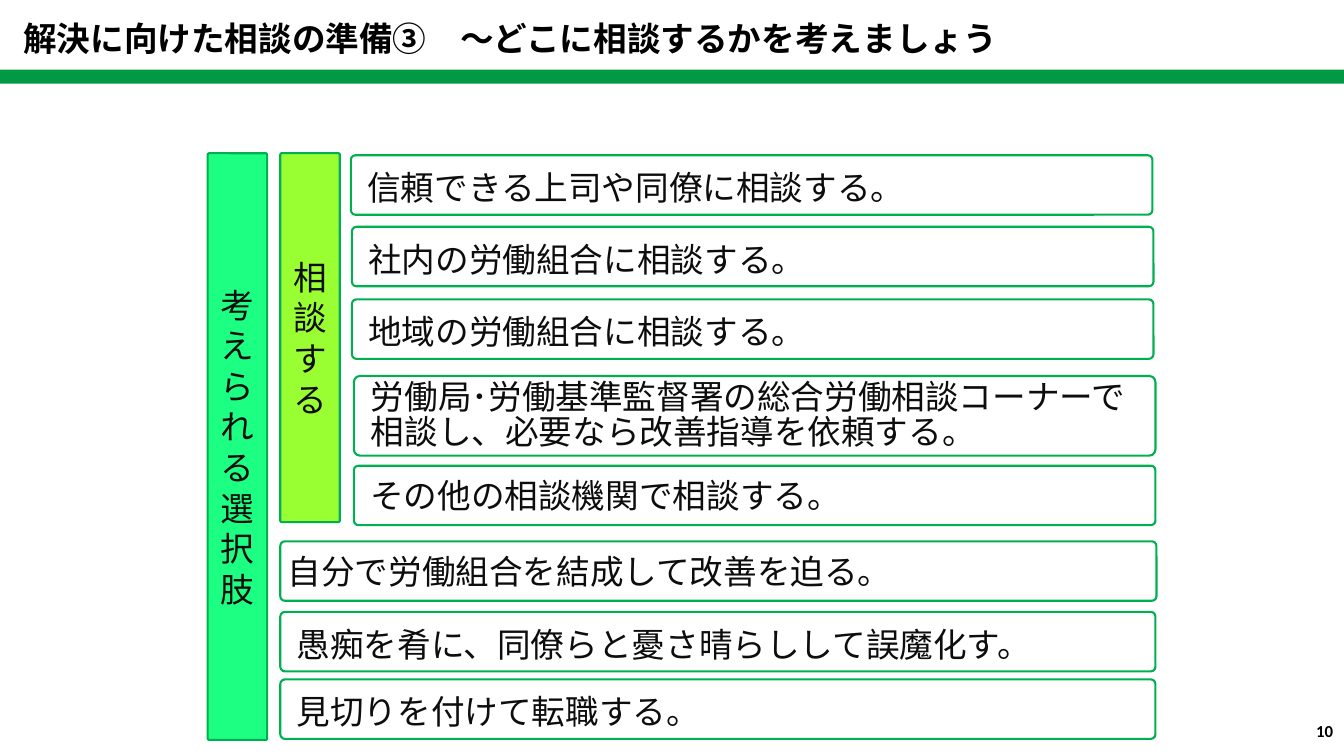
from dataclasses import dataclass

from lxml.etree import SubElement
from pptx import Presentation
from pptx.dml.color import RGBColor
from pptx.enum.shapes import MSO_SHAPE
from pptx.enum.text import MSO_ANCHOR, MSO_AUTO_SIZE, PP_ALIGN
from pptx.oxml.ns import qn
from pptx.util import Emu, Pt

EMU_PER_PX = 9144


@dataclass(frozen=True)
class Theme:
    white: str = "FFFFFF"
    border: str = "00B050"
    rule: str = "009944"
    options: str = "1DFF83"
    consult: str = "99FF33"
    ink: str = "0D0D0D"
    black: str = "000000"
    japanese_font: str = "Noto Sans CJK JP"
    number_font: str = "Calibri"
    text_size: int = 24
    number_size: int = 12
    border_width: float = 1.5
    opacity: int = 70


THEME = Theme()


@dataclass(frozen=True)
class Box:
    text: str
    left: int
    top: int
    width: int
    height: int = 59
    fill: str | None = THEME.white
    opacity: int = THEME.opacity
    corner: float = 0.077
    inset: int = 15
    spacing: int | None = 32
    align: PP_ALIGN = PP_ALIGN.LEFT


def heading_column(text: str, left: int, height: int, fill: str) -> Box:
    return Box(text, left, 152, 59, height, fill, opacity=100, corner=0.026,
               inset=6, spacing=29, align=PP_ALIGN.CENTER)


BOXES = (
    heading_column("考えられる選択肢", 206, 582, THEME.options),
    heading_column("相談する", 278, 366, THEME.consult),
    Box("自分で労働組合を結成して改善を迫る。", 278, 537, 869, inset=6, spacing=None),
    Box("愚痴を肴に、同僚らと憂さ晴らしして誤魔化す。", 278, 607, 868),
    Box("見切りを付けて転職する。", 278, 674, 868),
    Box("信頼できる上司や同僚に相談する。", 348, 154, 795),
    Box("社内の労働組合に相談する。", 349, 225, 795),
    Box("地域の労働組合に相談する。", 349, 297, 795),
    Box("労働局･労働基準監督署の総合労働相談コーナーで相談し、必要なら改善指導を依頼する。",
        351, 373, 795, 79, fill=None, spacing=25),
    Box("その他の相談機関で相談する。", 351, 462, 795, spacing=None),
)


def px(length: int) -> Emu:
    return Emu(length * EMU_PER_PX)


def set_attributes(target, values: dict) -> None:
    for name, value in values.items():
        setattr(target, name, value)


def place(shape, left: int, top: int, width: int, height: int) -> None:
    set_attributes(shape, {"left": px(left), "top": px(top),
                           "width": px(width), "height": px(height)})


def write(shape, text: str, font: str, size: int, color: str, bold: bool = False,
          align: PP_ALIGN = PP_ALIGN.LEFT, spacing: int | None = None) -> None:
    frame = shape.text_frame
    set_attributes(frame, {"word_wrap": True, "auto_size": MSO_AUTO_SIZE.NONE,
                           "vertical_anchor": MSO_ANCHOR.MIDDLE})
    para = frame.paragraphs[0]
    set_attributes(para, {"alignment": align,
                          "line_spacing": Pt(spacing) if spacing else None})
    span = para.add_run()
    span.text = text
    set_attributes(span.font, {"name": font, "size": Pt(size), "bold": bold})
    span.font.color.rgb = RGBColor.from_string(color)
    latin = span.font._element.find(qn("a:latin"))
    east_asian = SubElement(span.font._element, qn("a:ea"), typeface=font)
    latin.addnext(east_asian)


def paint(shape, color: str | None, opacity: int = 100) -> None:
    shape.shadow.inherit = False
    if color is None:
        shape.fill.background()
        return
    shape.fill.solid()
    shape.fill.fore_color.rgb = RGBColor.from_string(color)
    if opacity < 100:
        color_node = shape._element.spPr.find(qn("a:solidFill"))[0]
        SubElement(color_node, qn("a:alpha"), val=str(opacity * 1000))


def draw_box(page, box: Box) -> None:
    shape = page.shapes.add_shape(
        MSO_SHAPE.ROUNDED_RECTANGLE,
        *map(px, (box.left, box.top, box.width, box.height)))
    shape.adjustments[0] = box.corner
    paint(shape, box.fill, box.opacity)
    shape.line.color.rgb = RGBColor.from_string(THEME.border)
    shape.line.width = Pt(THEME.border_width)
    set_attributes(shape.text_frame, {
        "margin_left": px(box.inset), "margin_right": px(6),
        "margin_top": px(3), "margin_bottom": px(3)})
    write(shape, box.text, THEME.japanese_font, THEME.text_size, THEME.ink,
          align=box.align, spacing=box.spacing)


def main() -> None:
    deck = Presentation()
    set_attributes(deck, {"slide_width": px(1333), "slide_height": px(750)})
    page = deck.slides.add_slide(deck.slide_layouts[5])

    for box in BOXES:
        draw_box(page, box)

    rule = page.shapes.add_shape(MSO_SHAPE.RECTANGLE, *map(px, (0, 69, 1333, 14)))
    paint(rule, THEME.rule)
    rule.line.fill.background()

    title = page.shapes.title
    place(title, 13, 13, 1055, 50)
    write(title, "解決に向けた相談の準備③　～どこに相談するかを考えましょう",
          THEME.japanese_font, THEME.text_size, THEME.black, bold=True)

    number = page.shapes.add_textbox(*map(px, (1021, 705, 311, 40)))
    write(number, "10", THEME.number_font, THEME.number_size, THEME.black,
          bold=True, align=PP_ALIGN.RIGHT)

    deck.save("out.pptx")


if __name__ == "__main__":
    main()
